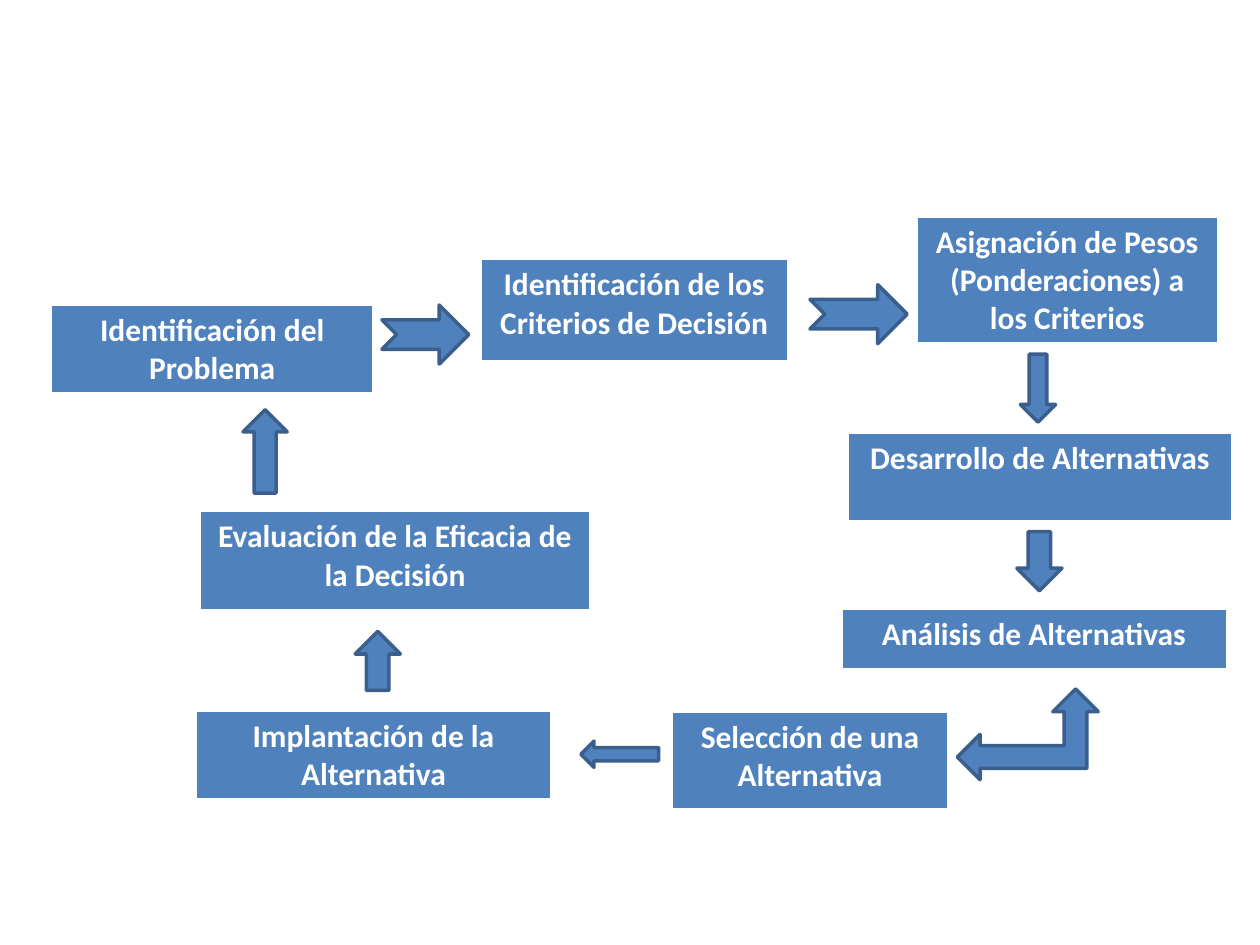
from typing import NamedTuple

from lxml import etree
from pptx import Presentation
from pptx.dml.color import RGBColor
from pptx.enum import shapes, text
from pptx.oxml import ns
from pptx.util import Cm, Pt

BLUE = RGBColor(0x4F, 0x81, 0xBD)
DARK_BLUE = RGBColor(0x3A, 0x5F, 0x8C)
WHITE = RGBColor(0xFF, 0xFF, 0xFF)
BORDERS = {"lnL": 1, "lnR": 1, "lnT": 1, "lnB": 3}
ARROW = shapes.MSO_SHAPE


class Step(NamedTuple):
    """One stage of the decision process; lengths in centimetres."""
    left: float
    top: float
    width: float
    height: float
    lines: tuple[str, ...]


class Arrow(NamedTuple):
    left: float
    top: float
    width: float
    height: float
    kind: shapes.MSO_SHAPE


STEPS = [
    Step(1.04, 6.15, 6.48, 1.78, ("Identificación del Problema",)),
    Step(9.7, 5.23, 6.17, 2.08, ("Identificación de los", "Criterios de Decisión")),
    Step(18.49, 4.37, 6.05, 2.54,
         ("Asignación de Pesos", "(Ponderaciones) a", "los Criterios")),
    Step(17.09, 8.74, 7.75, 1.78, ("Desarrollo de Alternativas",)),
    Step(16.97, 12.29, 7.75, 1.22, ("Análisis de Alternativas",)),
    Step(13.56, 14.35, 5.54, 1.98, ("Selección de una", "Alternativa")),
    Step(3.96, 14.33, 7.14, 1.78, ("Implantación de la", "Alternativa")),
    Step(4.04, 10.31, 7.85, 2.01, ("Evaluación de la Eficacia de", "la Decisión")),
]

ARROWS = [
    Arrow(7.7, 6.15, 1.75, 1.19, ARROW.NOTCHED_RIGHT_ARROW),
    Arrow(16.33, 5.74, 1.96, 1.19, ARROW.NOTCHED_RIGHT_ARROW),
    Arrow(20.57, 7.14, 0.71, 1.37, ARROW.DOWN_ARROW),
    Arrow(20.5, 10.72, 0.91, 1.19, ARROW.DOWN_ARROW),
    Arrow(19.3, 13.89, 2.84, 1.83, ARROW.LEFT_UP_ARROW),
    Arrow(11.71, 14.94, 1.57, 0.53, ARROW.LEFT_ARROW),
    Arrow(7.16, 12.73, 0.91, 1.19, ARROW.UP_ARROW),
    Arrow(4.9, 8.26, 0.89, 1.68, ARROW.UP_ARROW),
]


def set_borders(cell) -> None:
    """Draw white cell edges; they must precede the fill in tcPr."""
    tc_pr = cell._tc.get_or_add_tcPr()
    for i, (tag, points) in enumerate(BORDERS.items()):
        ln = etree.Element(ns.qn(f"a:{tag}"), w=str(Pt(points)))
        fill = etree.SubElement(ln, ns.qn("a:solidFill"))
        etree.SubElement(fill, ns.qn("a:srgbClr"), val=str(WHITE))
        tc_pr.insert(i, ln)


def add_step(s, step: Step) -> None:
    box = [Cm(v) for v in step[:4]]
    table = s.shapes.add_table(1, 1, *box).table
    cell = table.cell(0, 0)
    cell.fill.solid()
    cell.fill.fore_color.rgb = BLUE
    set_borders(cell)
    tf = cell.text_frame
    for i, line in enumerate(step.lines):
        p = tf.add_paragraph() if i else tf.paragraphs[0]
        p.alignment = text.PP_ALIGN.CENTER
        r = p.add_run()
        r.text = line
        r.font.name = "Calibri"
        r.font.size = Pt(18)
        r.font.bold = True
        r.font.color.rgb = WHITE


def add_arrow(s, arrow: Arrow) -> None:
    box = [Cm(v) for v in arrow[:4]]
    sp = s.shapes.add_shape(arrow.kind, *box)
    sp.shadow.inherit = False
    sp.fill.solid()
    sp.fill.fore_color.rgb = BLUE
    sp.line.color.rgb = DARK_BLUE
    sp.line.width = Pt(2)


def main() -> None:
    prs = Presentation()
    prs.slide_width, prs.slide_height = Cm(25.4), Cm(19.05)
    s = prs.slides.add_slide(prs.slide_layouts[6])
    for step in STEPS:
        add_step(s, step)
    for arrow in ARROWS:
        add_arrow(s, arrow)
    prs.save("out.pptx")


if __name__ == "__main__":
    main()
